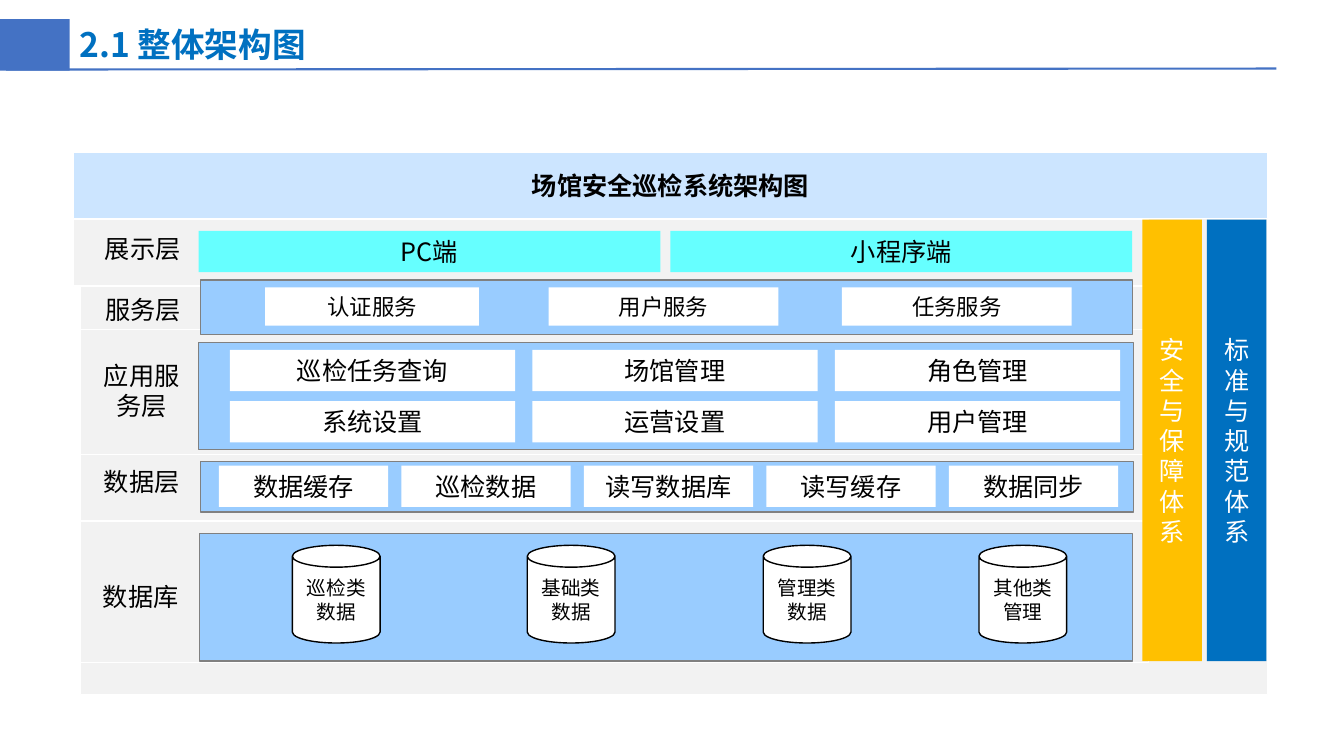
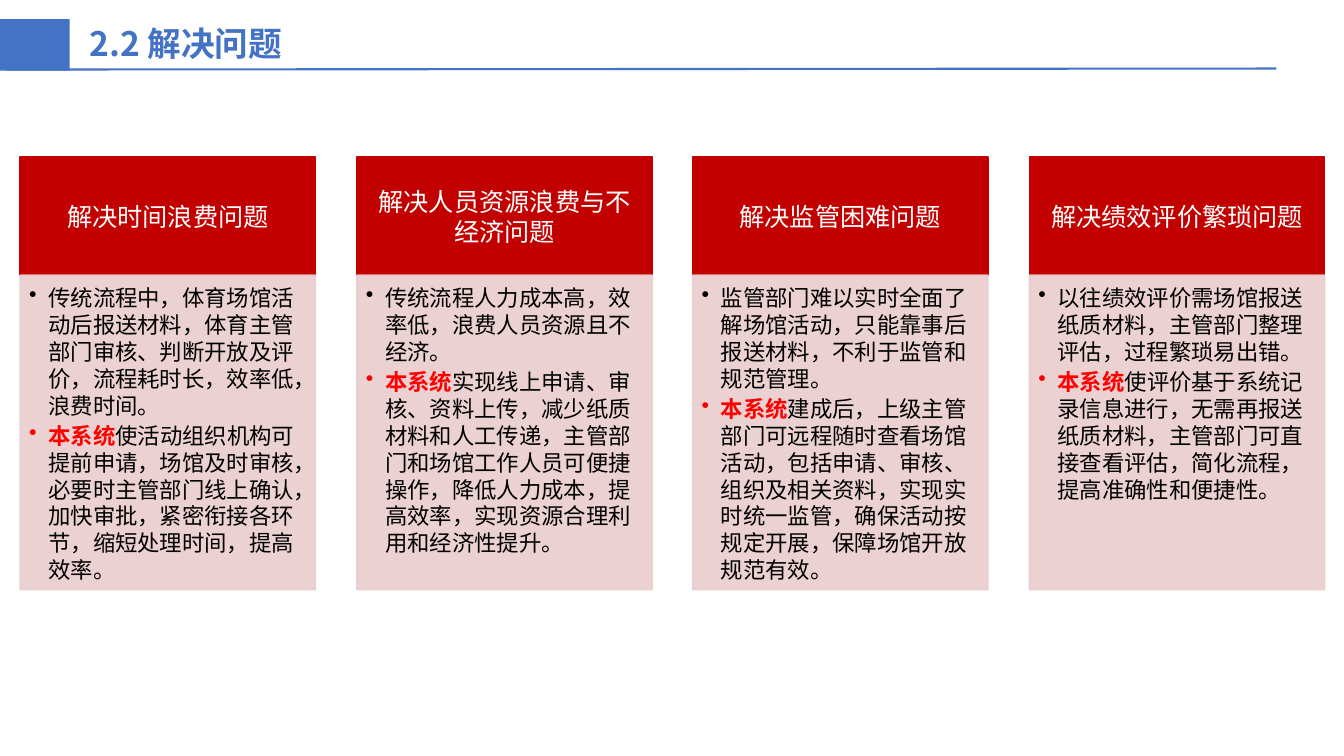
import pptx
import pptx.dml.color
import pptx.enum.shapes
import pptx.enum.text
import pptx.oxml
import pptx.oxml.ns
import pptx.util
from lxml import etree

Inches = pptx.util.Inches
Pt = pptx.util.Pt
SHAPE = pptx.enum.shapes.MSO_SHAPE
ALIGN = pptx.enum.text.PP_ALIGN
ANCHOR = pptx.enum.text.MSO_ANCHOR
qn = pptx.oxml.ns.qn

FONT = "Noto Sans CJK SC"
LINE_HEIGHT = 1.2
COLORS = {
    "accent": "4472C4",
    "blue": "0070C0",
    "gold": "FFC000",
    "header": "CCE5FF",
    "panel": "99CCFF",
    "client": "66FFFF",
    "band": "F2F2F2",
    "gray": "808080",
    "white": "FFFFFF",
    "black": "000000",
    "crimson": "C30000",
    "pink": "E9CCCC",
    "red": "FF0000",
}

PROBLEMS = [
    ("解决时间浪费问题",
     "传统流程中，体育场馆活动后报送材料，体育主管部门审核、判断开放及评价，流程耗时长，效率低，浪费时间。",
     "使活动组织机构可提前申请，场馆及时审核，必要时主管部门线上确认，加快审批，紧密衔接各环节，缩短处理时间，提高效率。"),
    ("解决人员资源浪费与不经济问题",
     "传统流程人力成本高，效率低，浪费人员资源且不经济。",
     "实现线上申请、审核、资料上传，减少纸质材料和人工传递，主管部门和场馆工作人员可便捷操作，降低人力成本，提高效率，实现资源合理利用和经济性提升。"),
    ("解决监管困难问题",
     "监管部门难以实时全面了解场馆活动，只能靠事后报送材料，不利于监管和规范管理。",
     "建成后，上级主管部门可远程随时查看场馆活动，包括申请、审核、组织及相关资料，实现实时统一监管，确保活动按规定开展，保障场馆开放规范有效。"),
    ("解决绩效评价繁琐问题",
     "以往绩效评价需场馆报送纸质材料，主管部门整理评估，过程繁琐易出错。",
     "使评价基于系统记录信息进行，无需再报送纸质材料，主管部门可直接查看评估，简化流程，提高准确性和便捷性。"),
]


def rgb(name):
    return pptx.dml.color.RGBColor.from_string(COLORS[name])


def inches(box):
    return [Inches(round(length, 2)) for length in box]


def style_paragraph(paragraph, size, color, bold=False, align=ALIGN.LEFT):
    paragraph.alignment = align
    paragraph.line_spacing = Pt(size * LINE_HEIGHT)
    for run in paragraph.runs:
        run.font.name = FONT
        run.font.size = Pt(size)
        run.font.bold = bold
        run.font.color.rgb = rgb(color)
        latin = run.font._element.find(qn("a:latin"))
        east_asian = pptx.oxml.parse_xml(etree.tostring(latin))
        east_asian.tag = qn("a:ea")
        latin.addnext(east_asian)


def write(holder, text, size, color, bold=False, align=ALIGN.CENTER, anchor=ANCHOR.MIDDLE):
    frame = holder.text_frame
    frame.word_wrap = True
    frame.vertical_anchor = anchor
    frame.text = text
    style_paragraph(frame.paragraphs[0], size, color, bold, align)


def add_block(slide, box, fill=None, line=None, text="", size=18, color="black",
              bold=False, preset=SHAPE.RECTANGLE):
    block = slide.shapes.add_shape(preset, *inches(box))
    block.shadow.inherit = False
    if fill:
        block.fill.solid()
        block.fill.fore_color.rgb = rgb(fill)
    else:
        block.fill.background()
    if line:
        block.line.color.rgb = rgb(line)
        block.line.width = Pt(1)
    else:
        block.line.fill.background()
    if text:
        write(block, text, size, color, bold)
    return block


def add_label(slide, box, text):
    write(slide.shapes.add_textbox(*inches(box)), text, 18, "black")


def add_titled_slide(deck, title, left, top, color):
    slide = deck.slides.add_slide(deck.slide_layouts[6])
    add_block(slide, (0, 0.19, 0.69, 0.51), "accent")
    rule = slide.shapes.add_connector(
        pptx.enum.shapes.MSO_CONNECTOR.STRAIGHT, *inches((0.06, 0.69, 12.66, 0.68)))
    rule.line.color.rgb = rgb("accent")
    rule.line.width = Pt(1.5)
    etree.SubElement(rule._element.spPr, qn("a:effectLst"))
    heading = slide.shapes.add_textbox(*inches((left, top, 12.43, 0.5)))
    write(heading, title, 24, color, True, ALIGN.LEFT, ANCHOR.TOP)
    return slide


def add_client_layer(slide, box):
    left, top, width, height = box
    gap = 0.1
    button = (width - gap) / 2
    for column, name in enumerate(("PC端", "小程序端")):
        add_block(slide, (left + column * (button + gap), top, button, height),
                  "client", text=name)


def add_service_layer(slide, box):
    left, top = box[:2]
    add_block(slide, box, "panel", "gray")
    for offset, width, name in ((0.64, 2.12, "认证服务"), (3.45, 2.28, "用户服务"),
                                (6.36, 2.28, "任务服务")):
        add_block(slide, (left + offset, top + 0.07, width, 0.38), "white",
                  text=name, size=16)


def add_module_grid(slide, box, rows, first, step, cell_width):
    """Draw a panel of white cells; first and step are (x, y) offsets in inches."""
    left, top = box[:2]
    add_block(slide, box, "panel", "gray")
    for row, names in enumerate(rows):
        for column, name in enumerate(names):
            add_block(slide, (left + first[0] + column * step[0],
                              top + first[1] + row * step[1], cell_width, 0.41),
                      "white", text=name)


def add_database_layer(slide, box):
    left, top = box[:2]
    add_block(slide, box, "panel", "gray")
    add_block(slide, (0.73, top - 0.21, 10.66, 1.49), line="white")
    for offset, name in ((0.92, "巡检类数据"), (3.25, "基础类数据"),
                         (5.59, "管理类数据"), (7.73, "其他类管理")):
        add_block(slide, (left + offset, top + 0.12, 0.87, 0.97), "white", "black",
                  name, 14, preset=SHAPE.CAN)


def add_pillars(slide, box):
    left, top, width, height = box
    pillar = 0.59
    for x, fill, name in ((left, "gold", "安全与保障体系"),
                          (left + width - pillar, "blue", "标准与规范体系")):
        add_block(slide, (x, top, pillar, height), fill, text=name, color="white")


def build_architecture(deck):
    slide = add_titled_slide(deck, "2.1 整体架构图", 0.69, 0.19, "blue")
    add_block(slide, (0.8, 1.51, 11.77, 5.38), "band", "white")
    add_database_layer(slide, (1.98, 5.29, 9.25, 1.27))
    add_block(slide, (0.73, 1.51, 11.84, 0.66), "header", "white",
              "场馆安全巡检系统架构图", bold=True)
    for band in ((0.8, 2.74, 10.66, 0.66), (0.73, 2.18, 10.66, 0.66),
                 (0.8, 3.27, 10.71, 1.24), (0.8, 4.51, 10.71, 0.66)):
        add_block(slide, band, "band", "white")
    add_client_layer(slide, (1.97, 2.29, 9.27, 0.41))
    add_service_layer(slide, (1.99, 2.78, 9.24, 0.54))
    add_module_grid(slide, (1.97, 3.4, 9.27, 1.06),
                    (("巡检任务查询", "场馆管理", "角色管理"),
                     ("系统设置", "运营设置", "用户管理")),
                    (0.31, 0.07), (3, 0.51), 2.83)
    add_module_grid(slide, (1.99, 4.58, 9.25, 0.5),
                    (("数据缓存", "巡检数据", "读写数据库", "读写缓存", "数据同步"),),
                    (0.18, 0.04), (1.81, 0), 1.68)
    add_pillars(slide, (11.33, 2.18, 1.23, 4.38))
    for box, name in (((0.86, 2.26, 1.11, 0.41), "展示层"),
                      ((0.8, 2.86, 1.24, 0.41), "服务层"),
                      ((0.85, 3.36, 1.11, 1.03), "应用服务层"),
                      ((0.85, 4.57, 1.11, 0.41), "数据层"),
                      ((0.8, 5.71, 1.19, 0.41), "数据库")):
        add_label(slide, box, name)


def set_insets(frame, left, top, right, bottom):
    frame.margin_left, frame.margin_top, frame.margin_right, frame.margin_bottom = inches(
        (left, top, right, bottom))


def add_bullet(paragraph):
    properties = paragraph._p.get_or_add_pPr()
    properties.set("marL", str(Inches(0.19)))
    properties.set("indent", str(-Inches(0.19)))
    etree.SubElement(properties, qn("a:buChar"), char="•")


def add_problem_column(slide, box, problem, remedy_start="本系统"):
    left, top, width, height = box
    name, difficulty, remedy = problem
    head_height = 1.17
    head = add_block(slide, (left, top, width, head_height), "crimson", "crimson",
                     name, color="white")
    set_insets(head.text_frame, 0.14, 0.08, 0.14, 0.08)

    body = add_block(slide, (left, top + head_height, width, height - head_height),
                     "pink", "pink")
    for tint in body._element.spPr.iter(qn("a:srgbClr")):
        etree.SubElement(tint, qn("a:alpha"), val="90000")
    frame = body.text_frame
    frame.word_wrap = True
    frame.vertical_anchor = ANCHOR.TOP
    set_insets(frame, 0.09, 0.09, 0.12, 0.14)
    before, after = frame.paragraphs[0], frame.add_paragraph()
    before.text = difficulty
    after.text = remedy_start
    after.add_run().text = remedy
    for paragraph in (before, after):
        add_bullet(paragraph)
        style_paragraph(paragraph, 16, "black")
        paragraph.space_after = Pt(2.4)
    emphasis = after.runs[0].font
    emphasis.bold = True
    emphasis.color.rgb = rgb("red")


def build_problems(deck):
    slide = add_titled_slide(deck, "2.2 解决问题", 0.79, 0.18, "accent")
    left, width, total = 0.2, 2.93, 12.94
    pitch = (total - width) / (len(PROBLEMS) - 1)
    for column, problem in enumerate(PROBLEMS):
        add_problem_column(slide, (left + column * pitch, 1.56, width, 4.29), problem)


def main():
    deck = pptx.Presentation()
    deck.slide_width = Inches(13.33)
    deck.slide_height = Inches(7.5)
    build_architecture(deck)
    build_problems(deck)
    deck.save("out.pptx")


if __name__ == "__main__":
    main()
